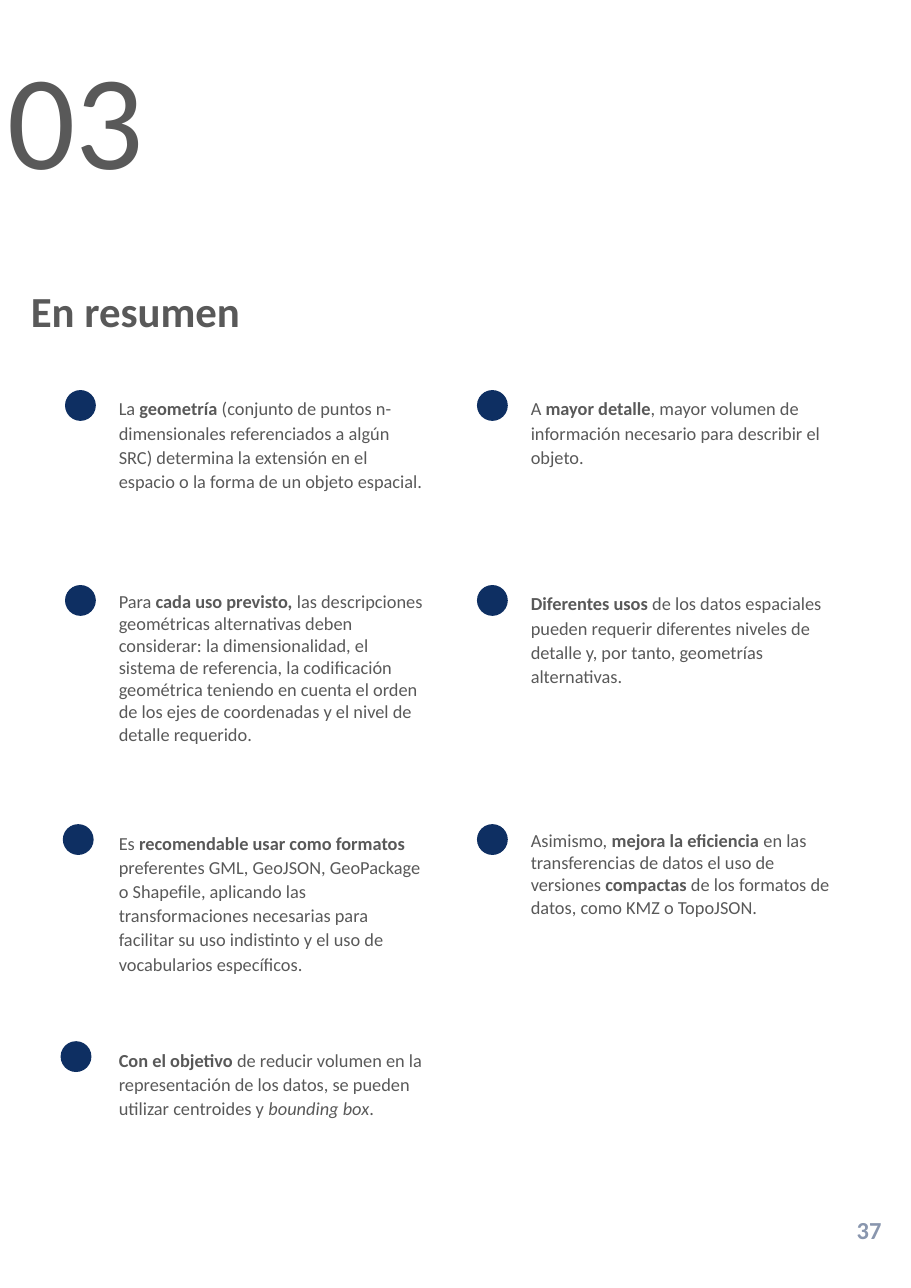
from pptx import Presentation
from pptx import util as u
from pptx.dml.color import RGBColor
from pptx.enum import shapes, text
from pptx.oxml.ns import qn

GREY, NAVY, STEEL = "595959", "0E2F62", "8996AE"
ALIGN = text.PP_ALIGN


def paint(target, code):
    target.rgb = RGBColor.from_string(code)


def put(target, values):
    for key, value in values.items():
        setattr(target, key, value)


class Page:
    def __init__(self, deck):
        self.font = "Calibri"
        self.slide = deck.slides.add_slide(deck.slide_layouts[1])

    def style(self, run, size, color, bold, italic):
        put(run.font, dict(name=self.font, size=u.Pt(size), bold=bold, italic=italic))
        paint(run.font.color, color)

    def letter(self, frame, words, size, color=GREY, bold=False, **layout):
        """Set one paragraph; *stars* mark bold and _bars_ mark italic."""
        put(frame, dict(word_wrap=True, vertical_anchor=text.MSO_ANCHOR.TOP))
        para = frame.paragraphs[0]
        put(para, layout)
        for i, part in enumerate(words.split("*")):
            for j, piece in enumerate(part.split("_")):
                if piece:
                    run = para.add_run()
                    run.text = piece
                    self.style(run, size, color, bold or i % 2 == 1, j % 2 == 1)

    def holder(self, shape, box, words, size, **layout):
        """Move a placeholder and fill it with one unbulleted paragraph."""
        put(shape, dict(zip(("left", "top", "width", "height"), map(u.Inches, box))))
        frame = shape.text_frame
        frame.auto_size = text.MSO_AUTO_SIZE.NONE
        props = frame.paragraphs[0]._p.get_or_add_pPr()
        for key in ("marL", "indent"):
            props.set(key, "0")
        props.append(props.makeelement(qn("a:buNone"), {}))
        self.letter(frame, words, size, line_spacing=0.9, space_before=u.Pt(0),
                    space_after=u.Pt(6), **layout)
        return frame

    def label(self, box, words, size, **layout):
        frame = self.slide.shapes.add_textbox(*map(u.Inches, box)).text_frame
        self.letter(frame, words, size, **layout)
        frame.auto_size = text.MSO_AUTO_SIZE.SHAPE_TO_FIT_TEXT

    def dot(self, left, top, size=0.28):
        box = map(u.Inches, (left, top, size, size))
        oval = self.slide.shapes.add_shape(shapes.MSO_SHAPE.OVAL, *box)
        oval.shadow.inherit = False
        oval.fill.solid()
        paint(oval.fill.fore_color, NAVY)
        oval.line.fill.background()


# Dot left, text left, top, text height, line spacing, words
POINTS = [
    (0.59, 0.98, 3.54, 1.2, 1.1,
     "La *geometría* (conjunto de puntos n-dimensionales referenciados a algún "
     "SRC) determina la extensión en el espacio o la forma de un objeto espacial."),
    (4.33, 4.72, 3.54, 0.76, 1.1,
     "A *mayor detalle*, mayor volumen de información necesario para describir "
     "el objeto."),
    (0.59, 0.98, 5.31, 1.51, 1.0,
     "Para *cada uso previsto, *las descripciones geométricas alternativas deben "
     "considerar: la dimensionalidad, el sistema de referencia, la codificación "
     "geométrica teniendo en cuenta el orden de los ejes de coordenadas y el "
     "nivel de detalle requerido."),
    (4.33, 4.72, 5.31, 0.98, 1.1,
     "*Diferentes usos *de los datos espaciales pueden requerir diferentes "
     "niveles de detalle y, por tanto, geometrías alternativas."),
    (0.57, 0.98, 7.48, 1.42, 1.1,
     "Es *recomendable usar como formatos* preferentes GML, GeoJSON, GeoPackage "
     "o Shapefile, aplicando las transformaciones necesarias para facilitar su "
     "uso indistinto y el uso de vocabularios específicos."),
    (4.33, 4.72, 7.48, 0.91, 1.0,
     "Asimismo, *mejora la eficiencia *en las transferencias de datos el uso de "
     "versiones *compactas* de los formatos de datos, como KMZ o TopoJSON."),
    (0.55, 0.98, 9.45, 0.76, 1.1,
     "*Con el objetivo *de reducir volumen en la representación de los datos, se "
     "pueden utilizar centroides y _bounding box_."),
]


def main():
    deck = Presentation()
    put(deck, dict(slide_width=u.Inches(8.27), slide_height=u.Inches(11.69)))
    page = Page(deck)
    title, body = page.slide.placeholders
    page.holder(title, (0.18, 2.59, 7.91, 0.77), "En resumen", 28,
                bold=True, alignment=ALIGN.JUSTIFY)
    frame = page.holder(body, (0.06, 0.43, 1.26, 1), "03", 88,
                        alignment=ALIGN.CENTER)
    put(frame, dict(margin_left=0, margin_right=0))
    for spot, left, top, height, gap, words in POINTS:
        page.dot(spot, top)
        page.label((left, top, 2.99, height), words, 12, line_spacing=gap)
    page.label((7.51, 10.98, 0.59, 0.37), "37", 16, color=STEEL, bold=True,
               alignment=ALIGN.RIGHT)
    deck.save("out.pptx")


if __name__ == "__main__":
    main()
